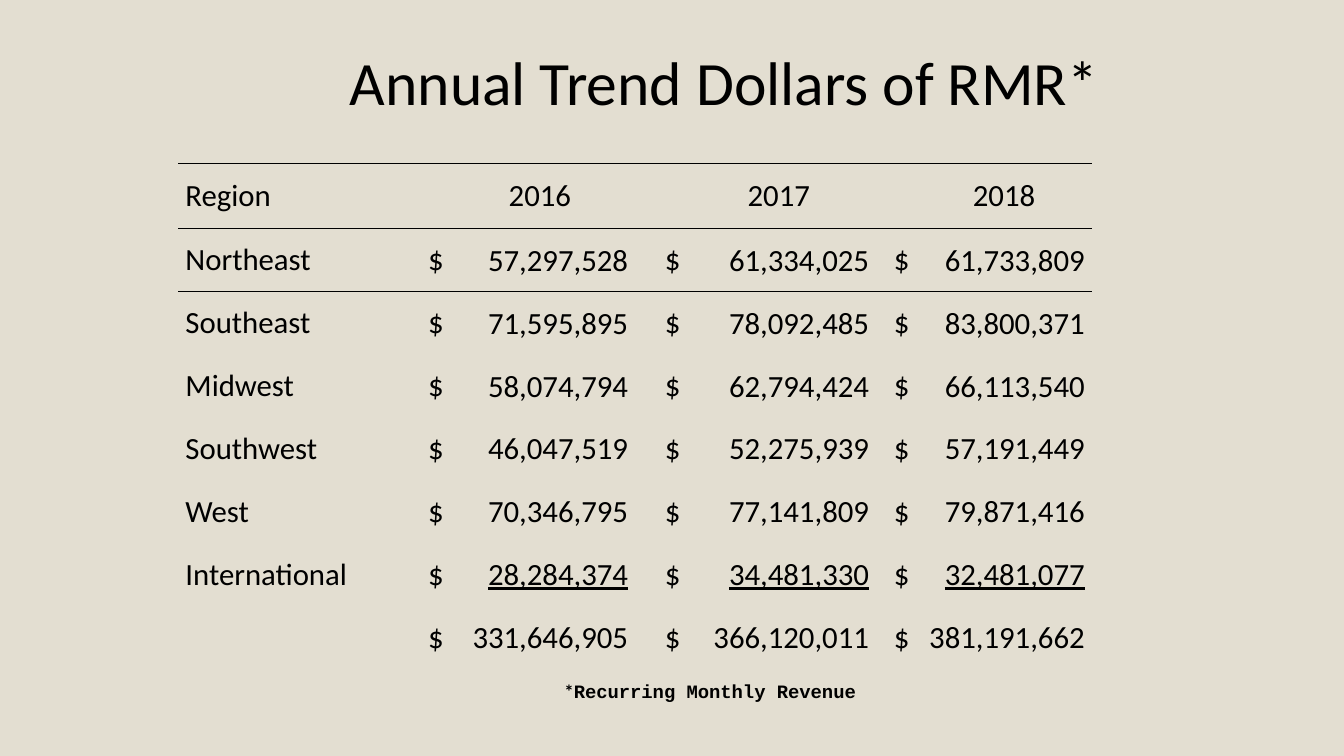
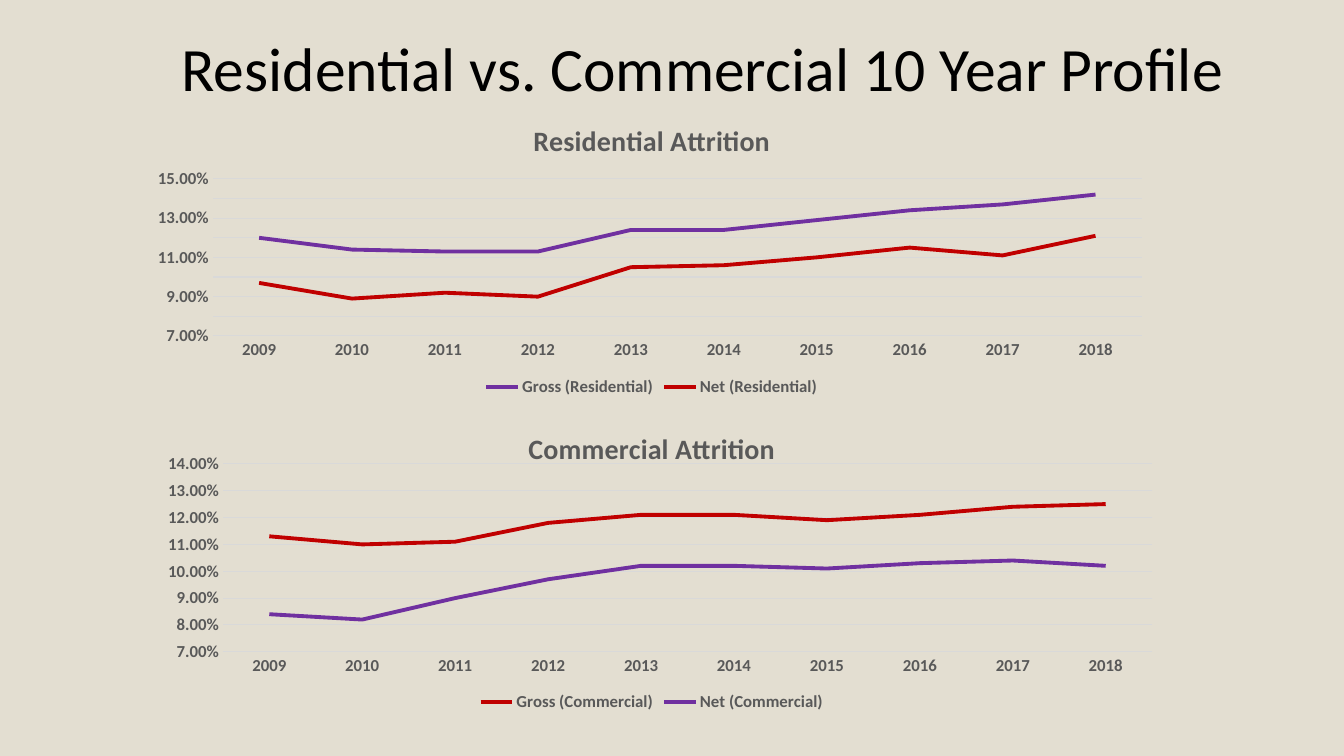
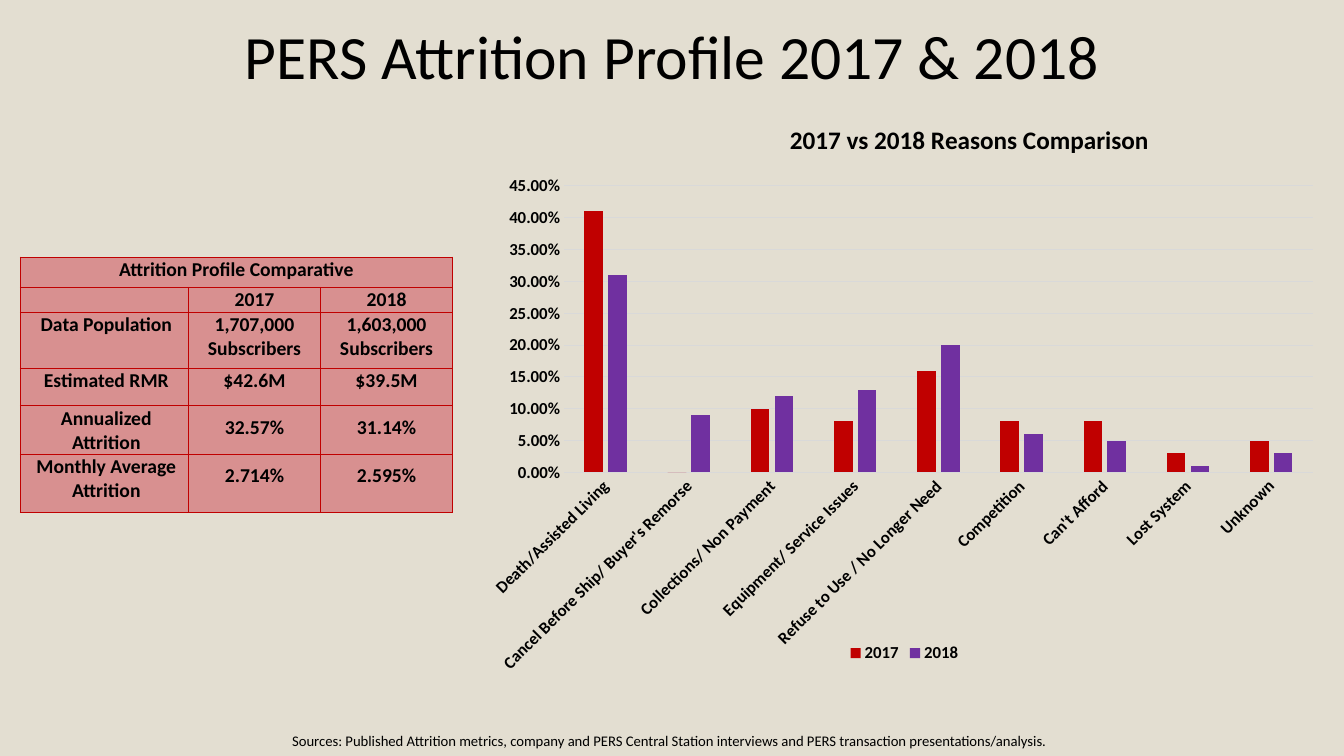
import pptx
import pptx.util
import pptx.dml.color
import pptx.chart.data
import pptx.enum.chart
import pptx.enum.text
import pptx.oxml
import pptx.oxml.ns

Inches = pptx.util.Inches
Pt = pptx.util.Pt
Rgb = pptx.dml.color.RGBColor.from_string
Align = pptx.enum.text.PP_ALIGN
Mid = pptx.enum.text.MSO_ANCHOR.MIDDLE
Kind = pptx.enum.chart.XL_CHART_TYPE


class Theme:
    paper = "E3DED1"
    ink = "000000"
    gray = "595959"
    rule = "D9D9D9"
    red = "C00000"
    purple = "7030A0"
    pink = "D89090"
    font = "Calibri"
    mono = "Courier New"
    title = 44
    body = 22
    cell = 14
    note = 13.5
    source = 10.5
    axis = 12
    head = 20
    small = 18


def write(frame, text, size, align=Align.LEFT, bold=False, color=Theme.ink):
    para = frame.paragraphs[0]
    para.alignment = align
    font = para.font
    font.name, font.size, font.bold = Theme.font, Pt(size), bold
    font.color.rgb = Rgb(color)
    if text:
        para.add_run().text = text
    else:
        para._p.get_or_add_endParaRPr().set("sz", str(size * 100))
    return para


def grid(slide, left, top, cols, rows):
    frame = slide.shapes.add_table(
        len(rows), len(cols), Inches(left), Inches(top),
        Inches(sum(cols)), Inches(sum(rows)))
    table = frame.table
    table.first_row = table.horz_banding = False
    style = table._tbl.tblPr.find(pptx.oxml.ns.qn("a:tableStyleId"))
    style.text = "{2D5ABB26-0587-4C30-8999-92F81FD0307C}"
    for col, width in zip(table.columns, cols):
        col.width = Inches(width)
    for row, height in zip(table.rows, rows):
        row.height = Inches(height)
    return table


deck = pptx.Presentation()
deck.slide_width, deck.slide_height = Inches(13.33), Inches(7.5)
back = deck.slide_master.background.fill
back.solid()
back.fore_color.rgb = Rgb(Theme.paper)

titles = [
    ("Annual Trend Dollars of RMR*", (1.6, 0.13, 9.4, 1.44), Align.RIGHT),
    ("Residential vs. Commercial 10 Year Profile", (1.65, 0.23, 10.59, 0.97), Align.RIGHT),
    ("PERS Attrition Profile 2017 & 2018", (0.99, 0.34, 11.36, 0.5), Align.CENTER),
]
slides = []
for text, box, align in titles:
    slide = deck.slides.add_slide(deck.slide_layouts[6])
    frame = slide.shapes.add_textbox(*map(Inches, box)).text_frame
    frame.word_wrap = True
    frame.vertical_anchor = Mid
    write(frame, text, Theme.title, align).line_spacing = 0.9
    slides.append(slide)
trend, years, pers = slides

edges = []
sales = [
    ("Region", "2016", "2017", "2018"),
    ("Northeast", "57,297,528", "61,334,025", "61,733,809"),
    ("Southeast", "71,595,895", "78,092,485", "83,800,371"),
    ("Midwest", "58,074,794", "62,794,424", "66,113,540"),
    ("Southwest", "46,047,519", "52,275,939", "57,191,449"),
    ("West", "70,346,795", "77,141,809", "79,871,416"),
    ("International", "28,284,374", "34,481,330", "32,481,077"),
    ("", "331,646,905", "366,120,011", "381,191,662"),
]
table = grid(trend, 1.77, 1.62, [2.24, 0.46, 1.77, 0.58, 1.81, 0.46, 1.74],
             [0.65] + [4.37 / 7] * 7)
for r, (name, *sums) in enumerate(sales):
    texts = [name]
    for total in sums:
        texts += ["$" if r else "", total]
    for c, text in enumerate(texts):
        cell = table.cell(r, c)
        cell.fill.background()
        cell.vertical_anchor = Mid
        cell.margin_left = cell.margin_right = Inches(0.07)
        cell.margin_top = cell.margin_bottom = Inches(0.04)
        amount = r > 0 and c > 0 and c % 2 == 0
        if amount:
            cell.margin_left = cell.margin_top = Inches(0.01)
            cell.margin_right = Inches(0.07 if c == 6 else 0.01)
            cell.margin_bottom = 0
        align = Align.LEFT if c == 0 else Align.RIGHT if r else Align.CENTER
        para = write(cell.text_frame, text, Theme.body, align)
        if amount and name == "International":
            para.font.underline = True
        if r < 2:
            edges.append((cell, "TB", Theme.ink, 1))

frame = trend.shapes.add_textbox(*map(Inches, (5.5, 6.69, 4.6, 0.33))).text_frame
frame.word_wrap = True
para = write(frame, "*", Theme.note, bold=True)
run = para.add_run()
run.text = "Recurring Monthly Revenue"
run.font.name = Theme.mono

profile = [
    ("Attrition Profile Comparative", "", ""),
    ("", "2017", "2018"),
    ("Data Population", "1,707,000 Subscribers", "1,603,000 Subscribers"),
    ("Estimated RMR", "$42.6M", "$39.5M"),
    ("Annualized Attrition", "32.57%", "31.14%"),
    ("Monthly Average Attrition", "2.714%", "2.595%"),
]
table = grid(pers, 0.2, 2.55, [1.67, 1.31, 1.31], [0.3, 0.24, 0.56, 0.37, 0.48, 0.58])
table.cell(0, 0).merge(table.cell(0, 2))
for r, texts in enumerate(profile):
    for c, text in enumerate(texts):
        cell = table.cell(r, c)
        cell.fill.solid()
        cell.fill.fore_color.rgb = Rgb(Theme.pink)
        cell.margin_left = Inches(0.05 if c == 0 and r > 1 else 0.01)
        cell.margin_right = Inches(0.01)
        cell.margin_top = Inches(0.1 if c and r > 3 else 0.01)
        cell.margin_bottom = 0
        write(cell.text_frame, text, Theme.cell, Align.CENTER, True)
        edges.append((cell, "LRTB", Theme.red, 0.5))

for cell, sides, color, width in edges:
    props = cell._tc.get_or_add_tcPr()
    for i, side in enumerate(sides):
        props.insert(i, pptx.oxml.parse_xml(
            f'<a:ln{side} {pptx.oxml.ns.nsdecls("a")} w="{Pt(width)}"><a:solidFill>'
            f'<a:srgbClr val="{color}"/></a:solidFill></a:ln{side}>'))

frame = pers.shapes.add_textbox(*map(Inches, (2.8, 7.21, 10.4, 0.29))).text_frame
frame.word_wrap = True
write(frame, "Sources: Published Attrition metrics, company and PERS Central Station "
      "interviews and PERS transaction presentations/analysis.", Theme.source)

span = [str(year) for year in range(2009, 2019)]
causes = [
    "Death/Assisted Living", "Cancel Before Ship/ Buyer's Remorse",
    "Collections/ Non Payment", "Equipment/ Service Issues",
    "Refuse to Use / No Longer Need", "Competition", "Can't Afford",
    "Lost System", "Unknown",
]
charts = [
    dict(slide=years, kind=Kind.LINE, box=(1.4, 1.04, 10.13, 2.94),
         title="Residential Attrition", size=Theme.head, color=Theme.gray,
         cats=span, scale=(0.07, 0.15, 0.01), plot=(0.07, 0.25, 0.91, 0.53),
         rows=[("Gross (Residential)", Theme.purple,
                (0.12, 0.114, 0.113, 0.113, 0.124, 0.124, 0.129, 0.134, 0.137, 0.142)),
               ("Net (Residential)", Theme.red,
                (0.097, 0.089, 0.092, 0.09, 0.105, 0.106, 0.11, 0.115, 0.111, 0.121))]),
    dict(slide=years, kind=Kind.LINE, box=(1.4, 4.09, 10.13, 3.01),
         title="Commercial Attrition", size=Theme.head, color=Theme.gray,
         cats=span, scale=(0.07, 0.14, 0.01), plot=(0.08, 0.17, 0.91, 0.62),
         rows=[("Gross (Commercial)", Theme.red,
                (0.113, 0.11, 0.111, 0.118, 0.121, 0.121, 0.119, 0.121, 0.124, 0.125)),
               ("Net (Commercial)", Theme.purple,
                (0.084, 0.082, 0.09, 0.097, 0.102, 0.102, 0.101, 0.103, 0.104, 0.102))]),
    dict(slide=pers, kind=Kind.COLUMN_CLUSTERED, box=(4.75, 0.98, 8.44, 6.18),
         title="2017 vs 2018 Reasons Comparison", size=Theme.small, color=Theme.ink,
         cats=causes, scale=(0, 0.45, 0.05), plot=(0.1, 0.14, 0.88, 0.46),
         rows=[("2017", Theme.red, (0.41, 0, 0.1, 0.08, 0.16, 0.08, 0.08, 0.03, 0.05)),
               ("2018", Theme.purple, (0.31, 0.09, 0.12, 0.13, 0.2, 0.06, 0.05, 0.01, 0.03))]),
]
for item in charts:
    data = pptx.chart.data.CategoryChartData(number_format="0.00%")
    data.categories = item["cats"]
    for name, color, vals in item["rows"]:
        data.add_series(name, vals)
    chart = item["slide"].shapes.add_chart(
        item["kind"], *map(Inches, item["box"]), data).chart

    chart.has_title = True
    write(chart.chart_title.text_frame, item["title"], item["size"],
          Align.CENTER, True, item["color"])
    chart.has_legend = True
    chart.legend.position = pptx.enum.chart.XL_LEGEND_POSITION.BOTTOM
    chart.legend.include_in_layout = False
    base, side = chart.category_axis, chart.value_axis
    for part in (chart, chart.legend, base.tick_labels, side.tick_labels):
        part.font.name, part.font.size, part.font.bold = Theme.font, Pt(Theme.axis), True
        part.font.color.rgb = Rgb(item["color"])

    for axis in (base, side):
        axis.major_tick_mark = axis.minor_tick_mark = pptx.enum.chart.XL_TICK_MARK.NONE
    side.minimum_scale, side.maximum_scale, side.major_unit = item["scale"]
    side.tick_labels.number_format = "0.00%"
    side.tick_labels.number_format_is_linked = False
    side.has_major_gridlines = True
    for line in (base.format.line, side.major_gridlines.format.line):
        line.color.rgb = Rgb(Theme.rule)
        line.width = Pt(0.75)
    side.format.line.fill.background()

    plot = chart.plots[0]
    plot.vary_by_categories = False
    for series, (name, color, vals) in zip(plot.series, item["rows"]):
        if item["kind"] == Kind.LINE:
            series.smooth = False
            series.format.line.color.rgb = Rgb(color)
            series.format.line.width = Pt(2.75)
        else:
            series.format.fill.solid()
            series.format.fill.fore_color.rgb = Rgb(color)

    spots = [(chart._chartSpace.chart.plotArea, 0, item["plot"])]
    if item["kind"] == Kind.COLUMN_CLUSTERED:
        plot.gap_width, plot.overlap = 219, -27
        base._element.txPr.bodyPr.set("rot", "-2700000")
        spots += [(chart.chart_title._element, 1, (0.36, 0.03)),
                  (chart.legend._element, 1, (0.43, 0.87, 0.14, 0.04))]
    for part, index, place in spots:
        for old in part.findall(pptx.oxml.ns.qn("c:layout")):
            part.remove(old)
        inner = '<c:layoutTarget val="inner"/>' if index == 0 else ""
        sizes = "".join(f'<c:{key} val="{val}"/>' for key, val in zip("xywh", place))
        part.insert(index, pptx.oxml.parse_xml(
            f'<c:layout {pptx.oxml.ns.nsdecls("c")}><c:manualLayout>{inner}'
            f'<c:xMode val="edge"/><c:yMode val="edge"/>{sizes}'
            '</c:manualLayout></c:layout>'))

deck.save("out.pptx")
